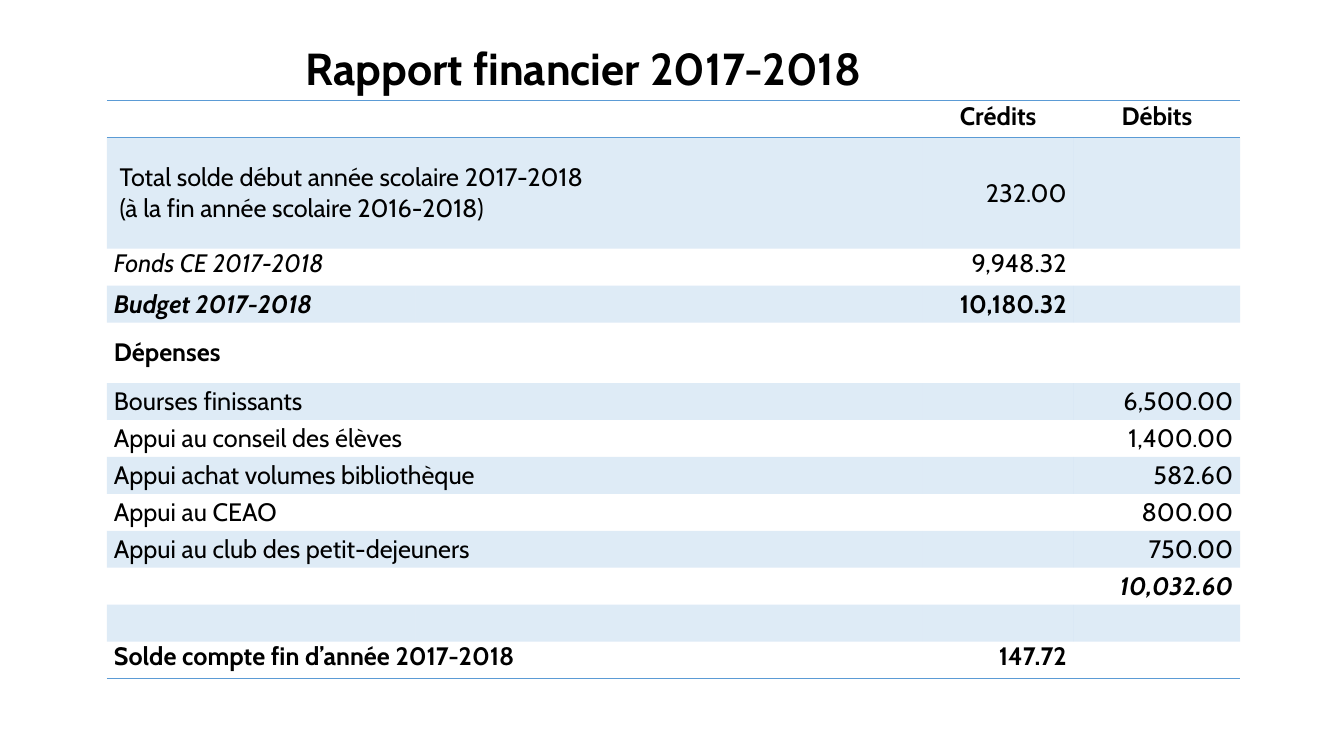
from lxml.etree import SubElement
from pptx import Presentation
from pptx.dml.color import RGBColor
from pptx.enum.text import MSO_ANCHOR as Anchor, MSO_AUTO_SIZE as AutoSize, PP_ALIGN as Align
from pptx.oxml.ns import qn
from pptx.util import Inches, Pt

TITLE = "Rapport financier 2017-2018"
FONT = "Cabin"
COLORS = {"text": "000000", "accent": "5B9BD5"}
BAND_ALPHA = 20
NO_STYLE = "{2D5ABB26-0587-4C30-8999-92F81FD0307C}"

# Label, credit, debit
ENTRIES = [
    ("", "Crédits", "Débits"),
    (" Total solde début année scolaire 2017-2018\n (à la fin année scolaire 2016-2018)", "232.00", ""),
    ("Fonds CE 2017-2018", "9,948.32", ""),
    ("Budget 2017-2018", "10,180.32", ""),
    ("Dépenses", "", ""),
    ("Bourses finissants", "", "6,500.00"),
    ("Appui au conseil des élèves", "", "1,400.00"),
    ("Appui achat volumes bibliothèque", "", "582.60"),
    ("Appui au CEAO", "", "800.00"),
    ("Appui au club des petit-dejeuners", "", "750.00"),
    ("", "", "10,032.60"),
    ("", "", ""),
    ("Solde compte fin d’année 2017-2018", "147.72", ""),
]
HEADER, OPENING, FUNDS, BUDGET, EXPENSES = range(5)
TOTAL, SPACER, BALANCE = range(10, 13)
BOLD_ROWS = {HEADER, BUDGET, EXPENSES, TOTAL, BALANCE}
TOP_ROWS = {HEADER, FUNDS, BALANCE}
UNMERGED_ROWS = {BUDGET, EXPENSES, SPACER}
ITALIC_CELLS = {(FUNDS, 0), (BUDGET, 0), (TOTAL, 3)}
RULES = {HEADER: ("a:lnT", "a:lnB"), BALANCE: ("a:lnB",)}

COLUMN_WIDTHS = [3.06, 5.03, 1.5, 1.65]
ROW_HEIGHT = Pt(26.4)
TALL_ROWS = {OPENING: Inches(1.1), EXPENSES: Inches(0.6)}


def style(paragraph, size, bold, italic, align):
    paragraph.alignment = align
    font = paragraph.font
    font.name, font.size, font.bold, font.italic = FONT, Pt(size), bold, italic
    font.color.rgb = RGBColor.from_string(COLORS["text"])


def add_rule(cell, side):
    line = SubElement(cell._tc.get_or_add_tcPr(), qn(side), w=str(Pt(1)))
    fill = SubElement(line, qn("a:solidFill"))
    SubElement(fill, qn("a:srgbClr"), val=COLORS["accent"])


def fill_band(cell):
    cell.fill.solid()
    cell.fill.fore_color.rgb = RGBColor.from_string(COLORS["accent"])
    color = cell._tc.tcPr.find(qn("a:solidFill")).find(qn("a:srgbClr"))
    SubElement(color, qn("a:alpha"), val=str(BAND_ALPHA * 1000))


prs = Presentation()
prs.slide_width, prs.slide_height = Inches(13.33), Inches(7.5)
slide = prs.slides.add_slide(prs.slide_layouts[6])

# Financial table
heights = [TALL_ROWS.get(row, ROW_HEIGHT) for row in range(len(ENTRIES))]
report = slide.shapes.add_table(
    len(ENTRIES), len(COLUMN_WIDTHS), Inches(1.06), Inches(1),
    Inches(sum(COLUMN_WIDTHS)), sum(heights)).table
report.first_row = report.horz_banding = False
report._tbl.tblPr.find(qn("a:tableStyleId")).text = NO_STYLE
for column, width in zip(report.columns, COLUMN_WIDTHS):
    column.width = Inches(width)

for row, (label, credit, debit) in enumerate(ENTRIES):
    report.rows[row].height = heights[row]
    for col, words in enumerate((label, "", credit, debit)):
        cell = report.cell(row, col)
        cell.margin_left = cell.margin_right = Inches(0.07)
        cell.margin_top = cell.margin_bottom = 0
        cell.vertical_anchor = Anchor.TOP if row in TOP_ROWS else Anchor.MIDDLE
        cell.text = words
        amount_align = Align.CENTER if row == HEADER else Align.RIGHT
        for paragraph in cell.text_frame.paragraphs:
            style(paragraph, 18, row in BOLD_ROWS, (row, col) in ITALIC_CELLS,
                  Align.LEFT if col < 2 else amount_align)
        for side in RULES.get(row, ()):
            add_rule(cell, side)
        if row % 2:
            fill_band(cell)
        else:
            cell.fill.background()
    if row not in UNMERGED_ROWS:
        report.cell(row, 0).merge(report.cell(row, 1))

# Title
heading = slide.shapes.add_textbox(Inches(2.42), Inches(0.36), Inches(6.74), Inches(0.64)).text_frame
heading.word_wrap = False
heading.auto_size = AutoSize.SHAPE_TO_FIT_TEXT
heading.text = TITLE
style(heading.paragraphs[0], 32, True, False, Align.CENTER)

prs.save("out.pptx")
